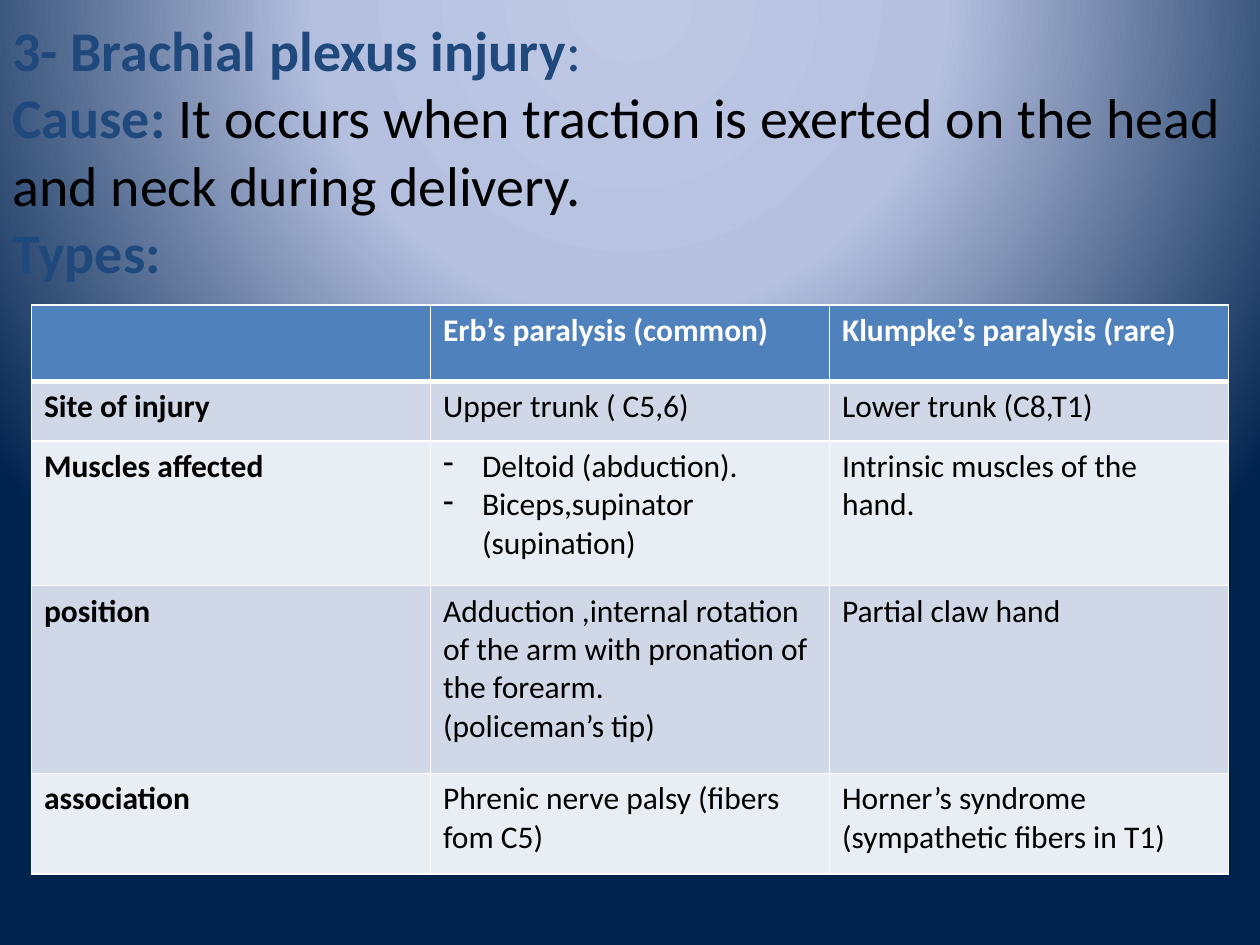
from lxml import etree
from pptx import Presentation
from pptx.dml.color import RGBColor
from pptx.enum.text import MSO_AUTO_SIZE
from pptx.oxml import parse_xml
from pptx.oxml.ns import nsdecls, qn
from pptx.util import Emu, Inches, Pt

FIT_SHAPE = MSO_AUTO_SIZE.SHAPE_TO_FIT_TEXT
NAVY = RGBColor(0x1F, 0x49, 0x7D)
BLACK = RGBColor(0, 0, 0)
WHITE = RGBColor(0xFF, 0xFF, 0xFF)
HEADER_BLUE = RGBColor(0x4F, 0x81, 0xBD)
BANDS = (RGBColor(0xD0, 0xD8, 0xE8), RGBColor(0xE9, 0xED, 0xF4))
BACKGROUND_STOPS = (
    (0, RGBColor(0xBF, 0xC9, 0xE5)),
    (40, RGBColor(0xB5, 0xC0, 0xE0)),
    (100, RGBColor(0x00, 0x23, 0x4D)),
)

# Each paragraph is a list of (text, colour, bold) runs.
INTRODUCTION = [
    [("3- Brachial plexus injury", NAVY, True), (":", NAVY, False)],
    [("Cause: ", NAVY, True),
     ("It occurs when traction is exerted on the head and neck during delivery.", BLACK, False)],
    [("Types:", NAVY, True)],
]
# Cell lines that start with the bullet mark become bulleted paragraphs.
BULLET = "- "
PARALYSIS_ROWS = [
    ("", "Erb’s paralysis (common)", "Klumpke’s paralysis (rare)"),
    ("Site of injury", "Upper trunk ( C5,6)", "Lower trunk (C8,T1)"),
    ("Muscles affected", "- Deltoid (abduction).\n- Biceps,supinator (supination)",
     "Intrinsic muscles of the hand."),
    ("position",
     "Adduction ,internal rotation of the arm with pronation of the forearm.\n(policeman’s tip)",
     "Partial claw hand"),
    ("association", "Phrenic nerve palsy (fibers fom C5)",
     "Horner’s syndrome (sympathetic fibers in T1)"),
]
ROW_HEIGHTS = (0.61, 0.47, 1.15, 1.49, 0.8)


class SlideBuilder:
    font_name = "Calibri"
    text_size = Pt(32)
    table_size = Pt(18)

    def __init__(self, presentation):
        self.width = presentation.slide_width
        self.height = presentation.slide_height
        self.slide = presentation.slides.add_slide(presentation.slide_layouts[6])

    def box(self, left, top, width, height):
        """Turn shares of the slide's size into lengths."""
        return (Emu(int(self.width * left)), Emu(int(self.height * top)),
                Emu(int(self.width * width)), Emu(int(self.height * height)))

    def radial_background(self, stops):
        """Circular gradient centred above the slide's top edge."""
        self.slide.background.fill.solid()
        solid = self.slide.element.find(".//" + qn("p:bgPr"))[0]
        stop_list = "".join(
            f'<a:gs pos="{share * 1000}"><a:srgbClr val="{colour}"/></a:gs>'
            for share, colour in stops)
        gradient = parse_xml(
            f'<a:gradFill {nsdecls("a")} rotWithShape="1"><a:gsLst>{stop_list}</a:gsLst>'
            '<a:path path="circle"><a:fillToRect l="50000" t="-80000" r="50000" b="180000"/>'
            '</a:path></a:gradFill>')
        solid.getparent().replace(solid, gradient)

    def text(self, place, paragraphs):
        frame = self.slide.shapes.add_textbox(*self.box(*place)).text_frame
        frame.word_wrap = True
        frame.auto_size = FIT_SHAPE
        for index, runs in enumerate(paragraphs):
            paragraph = frame.add_paragraph() if index else frame.paragraphs[0]
            paragraph.font.name = self.font_name
            paragraph.font.size = self.text_size
            for text, colour, bold in runs:
                run = paragraph.add_run()
                run.text = text
                run.font.color.rgb = colour
                run.font.bold = bold

    def table(self, place, rows, heights):
        shape = self.slide.shapes.add_table(len(rows), len(rows[0]), *self.box(*place))
        table = shape.table
        for row, height in zip(table.rows, heights):
            row.height = Inches(height)
        for row_index, texts in enumerate(rows):
            header = row_index == 0
            for column_index, text in enumerate(texts):
                cell = table.cell(row_index, column_index)
                self.borders(cell, top=3 if row_index == 1 else 1, bottom=3 if header else 1)
                cell.fill.solid()
                cell.fill.fore_color.rgb = HEADER_BLUE if header else BANDS[(row_index - 1) % 2]
                self.cell_text(cell, text, WHITE if header else BLACK,
                               header or column_index == 0)

    def cell_text(self, cell, text, colour, bold):
        cell.text = text
        for paragraph in cell.text_frame.paragraphs:
            font = paragraph.font
            font.name = self.font_name
            font.size = self.table_size
            font.color.rgb = colour
            font.bold = bold
            if paragraph.text.startswith(BULLET):
                self.bullet(paragraph)

    def bullet(self, paragraph):
        """Replace the typed bullet mark by a real hanging bullet."""
        run = paragraph.runs[0]
        run.text = run.text.removeprefix(BULLET)
        properties = paragraph._p.get_or_add_pPr()
        indent = Inches(0.31)
        properties.set("marL", str(indent))
        properties.set("indent", str(-indent))
        mark = etree.Element(qn("a:buChar"), char=BULLET.strip())
        properties.insert(0, mark)

    def borders(self, cell, top, bottom):
        properties = cell._tc.get_or_add_tcPr()
        for side, points in (("L", 1), ("R", 1), ("T", top), ("B", bottom)):
            line = etree.SubElement(properties, qn(f"a:ln{side}"), w=str(Pt(points)))
            fill = etree.SubElement(line, qn("a:solidFill"))
            etree.SubElement(fill, qn("a:srgbClr"), val=str(WHITE))


def main():
    presentation = Presentation()
    presentation.slide_width = Inches(10)
    presentation.slide_height = Inches(7.5)
    builder = SlideBuilder(presentation)
    builder.radial_background(BACKGROUND_STOPS)
    builder.text((0, 0.01, 1, 0.34), INTRODUCTION)
    builder.table((0.025, 0.3225, 0.95, 0.6), PARALYSIS_ROWS, ROW_HEIGHTS)
    presentation.save("out.pptx")


if __name__ == "__main__":
    main()
